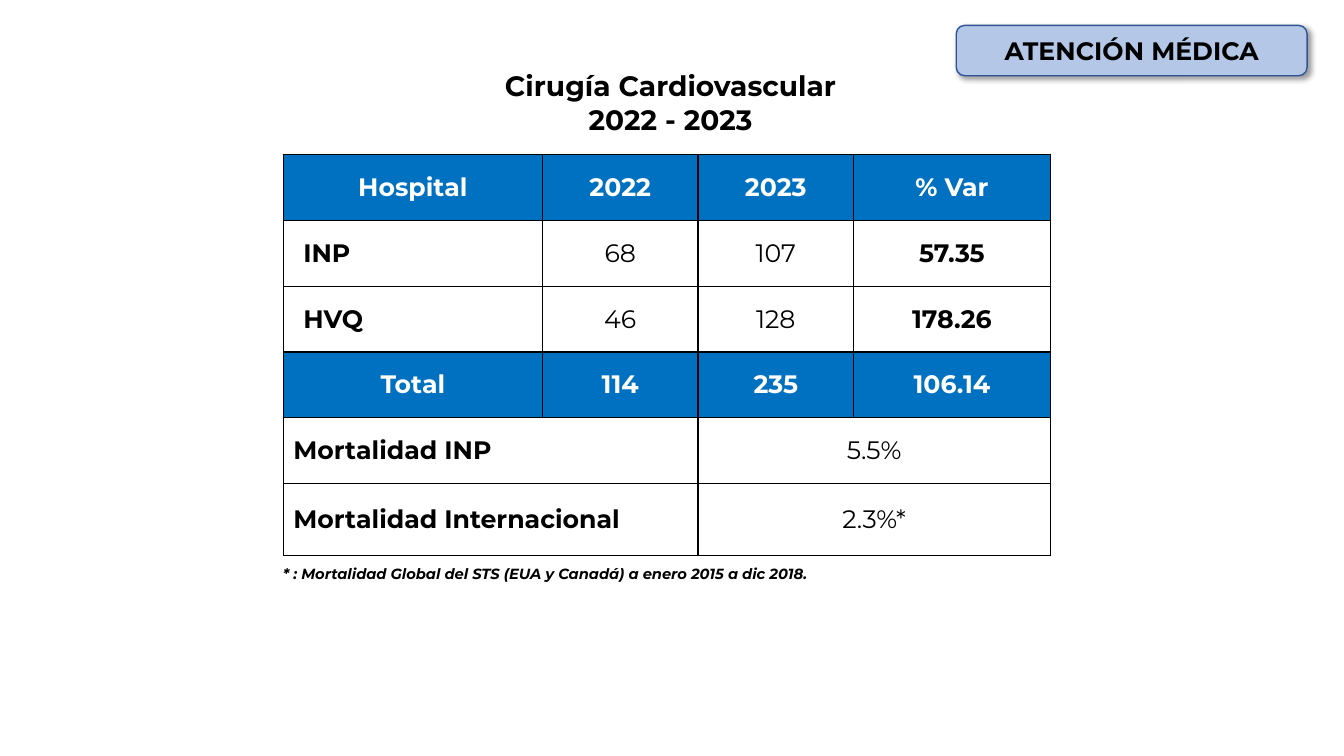
from lxml import etree
from pptx import Presentation
from pptx.dml.color import RGBColor
from pptx.enum import shapes, text
from pptx.oxml import parse_xml
from pptx.oxml.ns import nsdecls, qn
from pptx.util import Cm, Pt

BLACK = RGBColor(0x00, 0x00, 0x00)
WHITE = RGBColor(0xFF, 0xFF, 0xFF)
BLUE = RGBColor(0x00, 0x70, 0xC0)
PALE_BLUE = RGBColor(0xB4, 0xC7, 0xE7)
NAVY = RGBColor(0x2F, 0x55, 0x97)

CENTER, LEFT = text.PP_ALIGN.CENTER, text.PP_ALIGN.LEFT
BASE_FONT = {"name": "Montserrat", "size": Pt(18), "bold": True}

HOSPITAL_ROWS = [
    ("Hospital", "2022", "2023", "% Var"),
    ("INP", "68", "107", "57.35"),
    ("HVQ", "46", "128", "178.26"),
    ("Total", "114", "235", "106.14"),
]
MORTALITY_ROWS = [("Mortalidad INP", "5.5%"), ("Mortalidad Internacional", "2.3%*")]
BLUE_ROWS = (0, 3)
COLUMN_WIDTHS = (6.53, 3.92, 3.92, 4.96)
ROW_HEIGHTS = (1.66, 1.66, 1.66, 1.66, 1.66, 1.8)


def write(frame, content, align=CENTER, color=BLACK, **changes):
    """Fill a text frame, one paragraph per line, in the slide's font."""
    frame.text = content
    for paragraph in frame.paragraphs:
        paragraph.alignment = align
        for run in paragraph.runs:
            for attribute, value in {**BASE_FONT, **changes}.items():
                setattr(run.font, attribute, value)
            run.font.color.rgb = color


def place(shape, box):
    for side, length in zip(("left", "top", "width", "height"), box):
        setattr(shape, side, Cm(length))


def add_heading(slide, box):
    heading = slide.shapes.title
    place(heading, box)
    frame = heading.text_frame
    write(frame, "Cirugía Cardiovascular\n2022 - 2023", size=Pt(20))
    frame.vertical_anchor = text.MSO_ANCHOR.TOP
    frame.auto_size = text.MSO_AUTO_SIZE.SHAPE_TO_FIT_TEXT


def add_section_badge(slide, box):
    badge = slide.shapes.add_shape(
        shapes.MSO_SHAPE.ROUNDED_RECTANGLE, *map(Cm, box))
    badge.fill.solid()
    badge.fill.fore_color.rgb = PALE_BLUE
    badge.line.color.rgb = NAVY
    badge.line.width = Pt(1)
    badge.shadow.inherit = False
    badge.element.spPr.find(qn("a:effectLst")).append(parse_xml(
        f'<a:outerShdw {nsdecls("a")} blurRad="{Pt(4)}" dist="{Pt(3)}" '
        f'dir="{45 * 60000}" algn="tl" rotWithShape="0">'
        f'<a:srgbClr val="{BLACK}"><a:alpha val="40000"/></a:srgbClr></a:outerShdw>'))
    badge.text_frame.vertical_anchor = text.MSO_ANCHOR.MIDDLE
    write(badge.text_frame, "ATENCIÓN MÉDICA")


def add_borders(cell):
    properties = cell._tc.get_or_add_tcPr()
    for side in ("lnL", "lnR", "lnT", "lnB"):
        line = etree.SubElement(properties, qn(f"a:{side}"), w=str(Pt(1)))
        fill = etree.SubElement(line, qn("a:solidFill"))
        etree.SubElement(fill, qn("a:srgbClr"), val=str(BLACK))


def add_surgery_table(slide, box):
    row_count, column_count = len(ROW_HEIGHTS), len(COLUMN_WIDTHS)
    table = slide.shapes.add_table(
        row_count, column_count, *map(Cm, box)).table
    for column, width in zip(table.columns, COLUMN_WIDTHS):
        column.width = Cm(width)
    for row, height in zip(table.rows, ROW_HEIGHTS):
        row.height = Cm(height)

    for r in range(row_count):
        for c in range(column_count):
            cell = table.cell(r, c)
            add_borders(cell)
            cell.fill.solid()
            cell.fill.fore_color.rgb = BLUE if r in BLUE_ROWS else WHITE
            cell.vertical_anchor = text.MSO_ANCHOR.MIDDLE

    for r, values in enumerate(HOSPITAL_ROWS):
        is_blue = r in BLUE_ROWS
        for c, value in enumerate(values):
            is_name = c == 0 and not is_blue
            frame = table.cell(r, c).text_frame
            write(frame, value, LEFT if is_name else CENTER,
                  WHITE if is_blue else BLACK,
                  bold=is_blue or c in (0, column_count - 1))
            if is_name:
                frame.paragraphs[0]._p.get_or_add_pPr().set("marL", str(Cm(0.25)))

    for r, (label, rate) in enumerate(MORTALITY_ROWS, len(HOSPITAL_ROWS)):
        for c in (0, 2):
            table.cell(r, c).merge(table.cell(r, c + 1))
        write(table.cell(r, 0).text_frame, label, LEFT)
        write(table.cell(r, 2).text_frame, rate, bold=False)


def add_footnote(slide, box):
    frame = slide.shapes.add_textbox(*map(Cm, box)).text_frame
    frame.word_wrap = True
    frame.auto_size = text.MSO_AUTO_SIZE.SHAPE_TO_FIT_TEXT
    frame.margin_top = frame.margin_bottom = Cm(0.25)
    write(frame, "* : Mortalidad Global del STS (EUA y Canadá) a enero 2015 a dic 2018.",
          LEFT, size=Pt(10.5), italic=True)


def main():
    presentation = Presentation()
    presentation.slide_width, presentation.slide_height = Cm(33.87), Cm(19.05)
    slide = presentation.slides.add_slide(presentation.slide_layouts[5])
    add_surgery_table(slide, (7.14, 3.89, sum(COLUMN_WIDTHS), sum(ROW_HEIGHTS)))
    add_heading(slide, (8.43, 1.6, 16.94, 1.96))
    add_footnote(slide, (6.88, 14, 16.08, 0.99))
    add_section_badge(slide, (24.1, 0.64, 8.84, 1.27))
    presentation.save("out.pptx")


if __name__ == "__main__":
    main()
